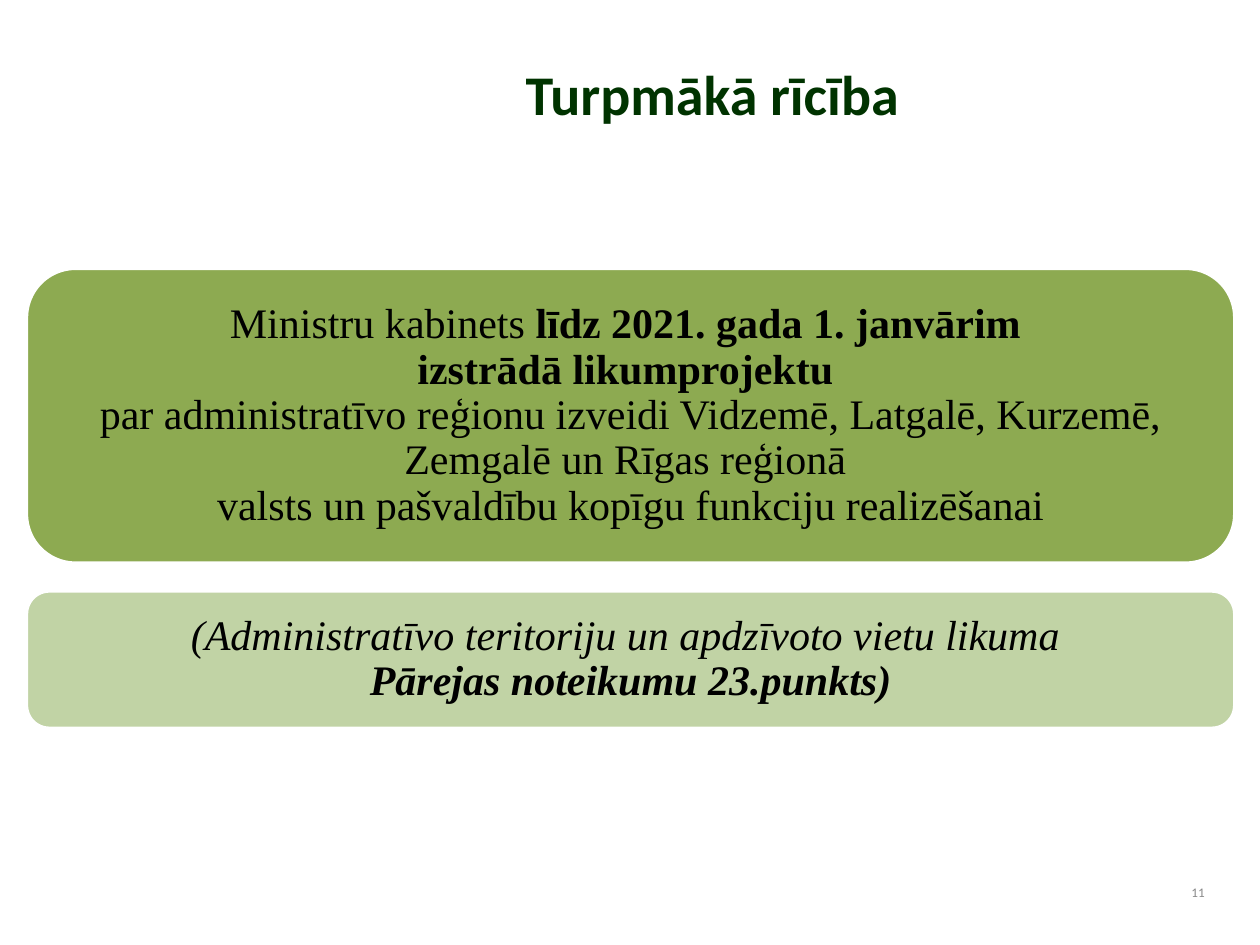
from pptx import Presentation
from pptx.dml.color import RGBColor
from pptx.enum import shapes, text
from pptx.util import Inches, Pt

COLORS = {
    "title": "003300",
    "number": "898989",
    "body": "000000",
    "decision": "8DAA51",
    "reference": "C1D3A5",
    "outline": "FFFFFF",
}
PANEL_LEFT, PANEL_WIDTH = 0.21, 9.59


def color(name):
    return RGBColor.from_string(COLORS[name])


def style_font(para, name, size, tint, bold=None, italic=None):
    font = para.font
    font.name, font.size = name, Pt(size)
    font.bold, font.italic = bold, italic
    font.color.rgb = color(tint)


def add_label(page, area, words, align, anchor, size, tint, bold=None):
    """Add a one-line text box."""
    box = page.shapes.add_textbox(*map(Inches, area))
    frame = box.text_frame
    frame.word_wrap = True
    frame.vertical_anchor = anchor
    para = frame.paragraphs[0]
    para.text = words
    para.alignment = align
    style_font(para, "Calibri", size, tint, bold)


def add_panel(page, top, height, fill, lines, italic=None):
    """Add a rounded panel; each line is a list of (words, bold) spans."""
    panel = page.shapes.add_shape(
        shapes.MSO_SHAPE.ROUNDED_RECTANGLE,
        Inches(PANEL_LEFT), Inches(top), Inches(PANEL_WIDTH), Inches(height))
    panel.shadow.inherit = False
    panel.fill.solid()
    panel.fill.fore_color.rgb = color(fill)
    panel.line.color.rgb = color("outline")
    panel.line.width = Pt(2)

    frame = panel.text_frame
    frame.word_wrap = True
    frame.vertical_anchor = text.MSO_ANCHOR.MIDDLE
    frame.margin_left = frame.margin_right = Inches(0.1)
    frame.margin_top = frame.margin_bottom = Inches(0.1)
    para = frame.paragraphs[0]
    para.alignment = text.PP_ALIGN.CENTER
    para.line_spacing = 0.9
    style_font(para, "Times New Roman", 24, "body", italic=italic)
    for index, line in enumerate(lines):
        if index:
            para.add_line_break()
        for words, bold in line:
            span = para.add_run()
            span.text = words
            span.font.bold = bold


def main():
    deck = Presentation()
    deck.slide_width, deck.slide_height = Inches(10), Inches(7.5)
    page = deck.slides.add_slide(deck.slide_layouts[6])

    # Title and page number
    add_label(page, (1.81, 0.42, 7.69, 1.13), "Turpmākā rīcība",
              text.PP_ALIGN.CENTER, text.MSO_ANCHOR.TOP, 32, "title", True)
    add_label(page, (9.33, 6.92, 0.33, 0.33), "11",
              text.PP_ALIGN.RIGHT, text.MSO_ANCHOR.MIDDLE, 7.5, "number")

    # Decision and its legal reference
    add_panel(page, 2.13, 2.34, "decision", [
        [("Ministru kabinets ", False), ("līdz 2021. gada 1. janvārim ", True)],
        [("izstrādā likumprojektu ", True)],
        [("par administratīvo reģionu izveidi Vidzemē, Latgalē, Kurzemē, "
          "Zemgalē un Rīgas reģionā ", False)],
        [("valsts un pašvaldību kopīgu funkciju realizēšanai", False)],
    ])
    add_panel(page, 4.69, 1.09, "reference", [
        [("(Administratīvo teritoriju un apdzīvoto vietu likuma ", False)],
        [("Pārejas noteikumu 23.punkts)", True)],
    ], italic=True)

    deck.save("out.pptx")


if __name__ == "__main__":
    main()
